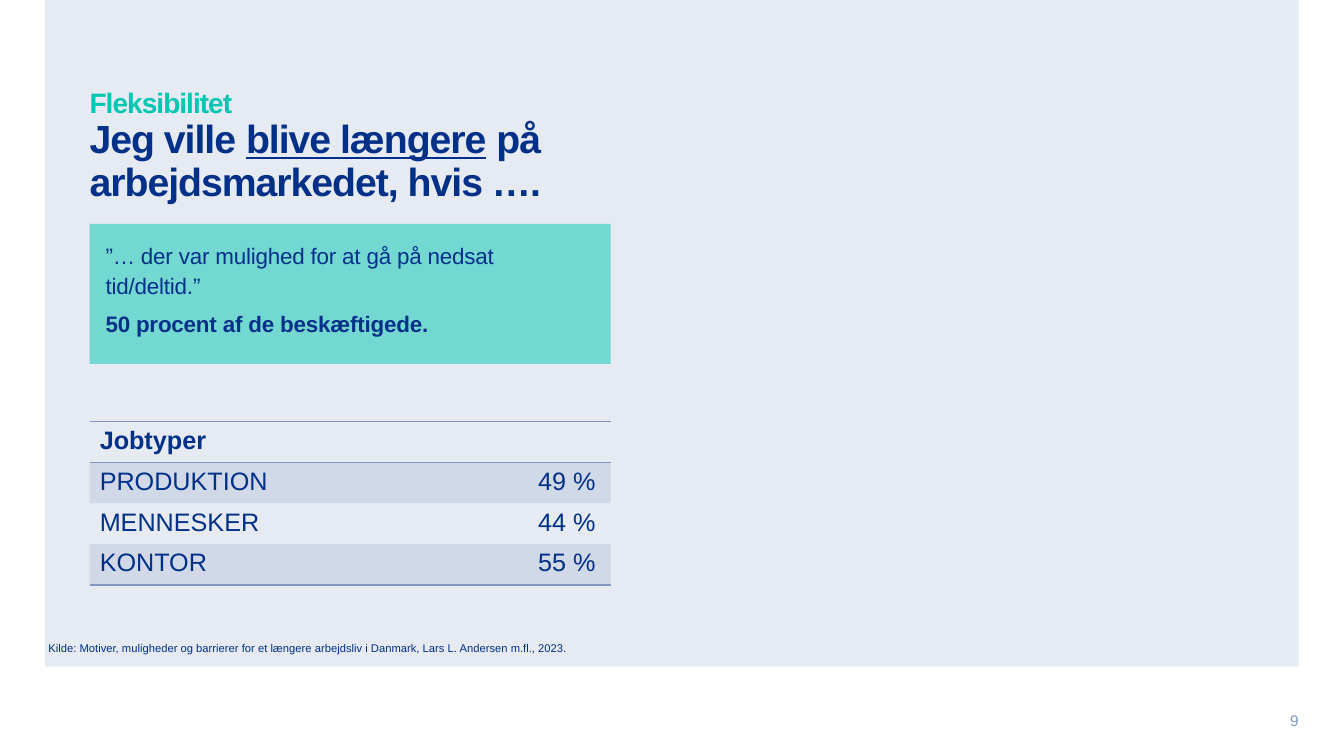
from lxml.etree import SubElement
from pptx import Presentation
from pptx.dml.color import RGBColor
from pptx.enum.shapes import MSO_SHAPE as SHAPE
from pptx.enum.text import MSO_ANCHOR as ANCHOR, PP_ALIGN as ALIGN
from pptx.oxml import parse_xml
from pptx.oxml.ns import nsdecls, qn
from pptx.util import Cm, Pt

NAVY, TEAL, STEEL, PALE = "003087", "00C7B1", "8097C3", "E6EAF3"
NO_STYLE = "{2D5ABB26-0587-4C30-8999-92F81FD0307C}"
LEFT, WIDTH = 2.26, 13.13


def rgb(color):
    """Turn a hex string into a colour."""
    return RGBColor.from_string(color)


def set_fill(fill, color, alpha=100):
    """Fill solidly, with an opacity in percent."""
    fill.solid()
    fill.fore_color.rgb = rgb(color)
    if alpha < 100:
        clr = fill._xPr.find(qn("a:solidFill")).find(qn("a:srgbClr"))
        SubElement(clr, qn("a:alpha"), val=str(alpha * 1000))


def add_run(p, text, size, color=NAVY, bold=False, underline=False, tracking=0):
    """Add one formatted run; tracking is in points."""
    r = p.add_run()
    r.text = text
    r.font.name = "Arial"
    r.font.size = Pt(size)
    r.font.color.rgb = rgb(color)
    r.font.bold = bold
    r.font.underline = underline
    if tracking:
        r._r.get_or_add_rPr().set("spc", str(round(tracking * 100)))


def setup_frame(tf, margin=0, anchor=ANCHOR.TOP):
    """Set wrapping, equal margins and the anchor."""
    tf.word_wrap = True
    tf.margin_left = tf.margin_right = Cm(margin)
    tf.margin_top = tf.margin_bottom = Cm(margin)
    tf.vertical_anchor = anchor
    return tf


def add_text(s, x, y, w, h, anchor=ANCHOR.TOP):
    """Add a text box and return its first paragraph."""
    box = s.shapes.add_textbox(Cm(x), Cm(y), Cm(w), Cm(h))
    return setup_frame(box.text_frame, anchor=anchor).paragraphs[0]


def add_rect(s, x, y, w, h, color, alpha=100):
    """Add a plain rectangle without outline."""
    sp = s.shapes.add_shape(SHAPE.RECTANGLE, Cm(x), Cm(y), Cm(w), Cm(h))
    sp.shadow.inherit = False
    sp.line.fill.background()
    set_fill(sp.fill, color, alpha)
    return sp


def add_title(s):
    """Add the kicker and the two-line title."""
    p = add_text(s, LEFT, 2.26, 29.36, 1.12)
    p.line_spacing = 0.9
    add_run(p, "Fleksibilitet", 20, TEAL, True, tracking=-0.7)
    p.add_line_break()
    add_run(p, "Jeg ville ", 28, bold=True, tracking=-0.7)
    add_run(p, "blive længere", 28, bold=True, underline=True, tracking=-0.7)
    add_run(p, " på ", 28, bold=True, tracking=-0.7)
    p.add_line_break()
    add_run(p, "arbejdsmarkedet, hvis ….", 28, bold=True, tracking=-0.7)


def add_quote(s, quote, share):
    """Add the tinted box with a quote and its share in bold."""
    sp = add_rect(s, LEFT, 5.64, WIDTH, 3.53, TEAL, 50)
    tf = setup_frame(sp.text_frame, 0.4)
    for p, text, bold in ((tf.paragraphs[0], quote, False),
                          (tf.add_paragraph(), share, True)):
        p.alignment = ALIGN.LEFT
        p.line_spacing = 1.1
        p.space_after = Pt(6)
        add_run(p, text, 16, bold=bold, tracking=-0.1)


def add_border(cell, side):
    """Draw a thin line on one side of a cell."""
    cell._tc.get_or_add_tcPr().append(parse_xml(
        f'<a:{side} {nsdecls("a")} w="{Pt(1)}"><a:solidFill>'
        f'<a:srgbClr val="{STEEL}"/></a:solidFill></a:{side}>'))


def add_job_table(s, rows, widths, row_height):
    """Add a ruled table with every second row tinted."""
    frame = s.shapes.add_table(len(rows), len(widths), Cm(LEFT), Cm(10.62),
                               Cm(sum(widths)), Cm(row_height * len(rows)))
    table = frame.table
    table.horz_banding = False
    table._tbl.tblPr.find(qn("a:tableStyleId")).text = NO_STYLE
    for column, width in zip(table.columns, widths):
        column.width = Cm(width)
    for i, values in enumerate(rows):
        for j, text in enumerate(values):
            cell = table.cell(i, j)
            if i == 0:
                add_border(cell, "lnT")
            if i in (0, len(rows) - 1):
                add_border(cell, "lnB")
            if i % 2:
                set_fill(cell.fill, STEEL, 20)
            else:
                cell.fill.background()
            if text:
                add_run(cell.text_frame.paragraphs[0], text, 18, bold=i == 0)


def main():
    """Build and save the slide."""
    prs = Presentation()
    prs.slide_width, prs.slide_height = Cm(33.87), Cm(19.05)
    s = prs.slides.add_slide(prs.slide_layouts[6])
    add_rect(s, 1.13, 0, 31.6, 16.8, PALE)

    p = add_text(s, 31.6, 17.98, 1.13, 0.36, ANCHOR.MIDDLE)
    p.alignment = ALIGN.RIGHT
    add_run(p, "9", 11, STEEL)

    add_title(s)
    add_quote(s, "”… der var mulighed for at gå på nedsat tid/deltid.”",
              "50 procent af de beskæftigede.")
    add_job_table(s, [("Jobtyper", ""), ("PRODUKTION", "49 %"),
                      ("MENNESKER", "44 %"), ("KONTOR", "55 %")],
                  (11.05, 2.08), 1.03)

    p = add_text(s, 1.22, 16.15, 14.58, 0.53)
    p.line_spacing = 1.04
    p.space_after = Pt(3)
    add_run(p, "Kilde: Motiver, muligheder og barrierer for et længere "
               "arbejdsliv i Danmark, Lars L. Andersen m.fl., 2023.", 8)
    prs.save("out.pptx")


if __name__ == "__main__":
    main()
